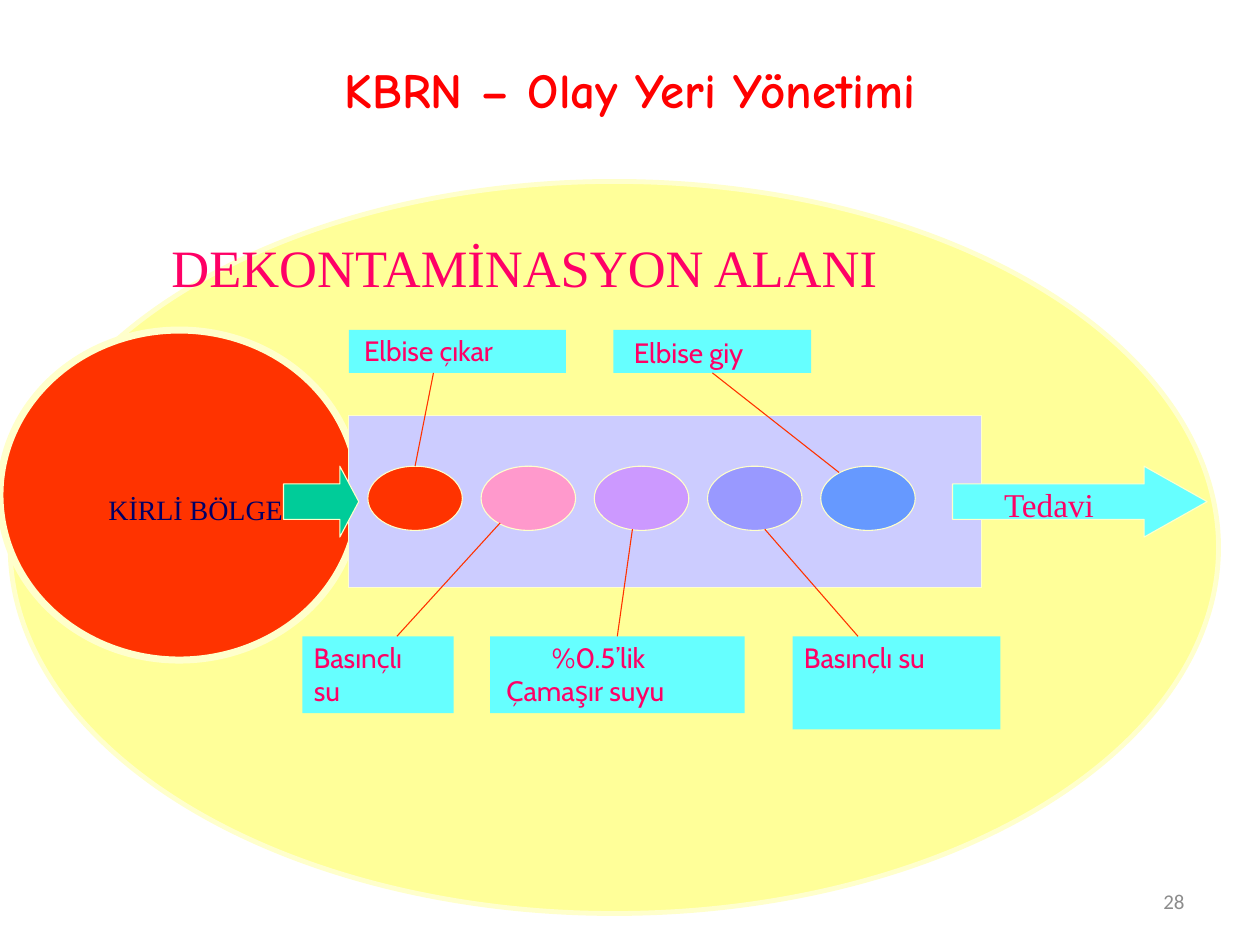
from dataclasses import dataclass

from lxml.etree import SubElement
from pptx import Presentation
from pptx.dml.color import RGBColor
from pptx.enum.shapes import MSO_CONNECTOR, MSO_SHAPE
from pptx.enum.text import MSO_ANCHOR, MSO_AUTO_SIZE, PP_ALIGN
from pptx.oxml.ns import qn
from pptx.util import Pt


@dataclass(frozen=True)
class Theme:
    """Colours, fonts and type sizes of the slide."""
    red: str = "FF0000"
    pink: str = "FF0066"
    navy: str = "000066"
    grey: str = "8C8C8C"
    area: str = "FFFF99"
    outline: str = "FFFFCC"
    hot: str = "FF3300"
    corridor: str = "CCCCFF"
    cyan: str = "66FFFF"
    green: str = "00CC99"
    stations: tuple = ("FF3300", "FF99CC", "CC99FF", "9999FF", "6699FF")
    title_font: str = "Comic Neue"
    serif: str = "Times New Roman"
    label_font: str = "Cabin"
    number_font: str = "Calibri"
    title: float = 28
    heading: float = 30
    treatment: float = 19
    label: float = 16
    number: float = 12
    thin: float = 0.63


T = Theme()


def add_run(tf, text, font, size, color, bold=False):
    """Add one formatted run to the first paragraph and return the paragraph."""
    p = tf.paragraphs[0]
    r = p.add_run()
    r.text = text
    r.font.name = font
    r.font.size = Pt(size)
    r.font.bold = bold
    r.font.color.rgb = RGBColor.from_string(color)
    return p


def add_block(s, kind, box, fill, line_width=0):
    """Add a filled preset shape, outlined when a line width is given."""
    sp = s.shapes.add_shape(kind, *map(Pt, box))
    sp.shadow.inherit = False
    sp.fill.solid()
    sp.fill.fore_color.rgb = RGBColor.from_string(fill)
    if line_width:
        sp.line.color.rgb = RGBColor.from_string(T.outline)
        sp.line.width = Pt(line_width)
    else:
        sp.line.fill.background()
    return sp


def add_arrow(s, box, fill, head):
    """Add a right arrow whose head has the given length."""
    sp = add_block(s, MSO_SHAPE.RIGHT_ARROW, box, fill, T.thin)
    sp.adjustments[0] = 0.5
    sp.adjustments[1] = head / box[3]


def add_caption(s, box, text, font, size, color):
    """Add an unwrapped text box without margins."""
    tf = s.shapes.add_textbox(*map(Pt, box)).text_frame
    tf.margin_left = tf.margin_top = tf.margin_right = tf.margin_bottom = 0
    tf.word_wrap = False
    tf.auto_size = MSO_AUTO_SIZE.SHAPE_TO_FIT_TEXT
    add_run(tf, text, font, size, color)


def add_frame(s, box, align, *run):
    """Add a wrapped, vertically centred text box."""
    tf = s.shapes.add_textbox(*map(Pt, box)).text_frame
    tf.word_wrap = True
    tf.vertical_anchor = MSO_ANCHOR.MIDDLE
    add_run(tf, *run).alignment = align


def add_label(s, box, *lines):
    """Add a cyan label with its text lines and return the rectangle."""
    sp = add_block(s, MSO_SHAPE.RECTANGLE, box, T.cyan)
    for left, top, width, text in lines:
        add_caption(s, (left, top, width, 24.5), text, T.label_font, T.label, T.pink)
    return sp


def add_leader(s, start, end, label=None, site=0, station=None):
    """Add a thin leader, joined to a label side or a station top if given."""
    cx = s.shapes.add_connector(MSO_CONNECTOR.STRAIGHT, *map(Pt, start + end))
    cx.line.color.rgb = RGBColor.from_string(T.hot)
    cx.line.width = Pt(T.thin)
    SubElement(cx._element.spPr, qn("a:effectLst"))
    if label is not None:
        cx.begin_connect(label, site)
    if station is not None:
        cx.end_connect(station, 0)


def add_stations(s):
    """Add the row of evenly spaced stations and return them."""
    return [add_block(s, MSO_SHAPE.OVAL, (210.2 + 64.7 * i, 266.4, 54, 36.7), color, T.thin)
            for i, color in enumerate(T.stations)]


def main():
    """Build the slide and save it."""
    prs = Presentation()
    prs.slide_width, prs.slide_height = Pt(720), Pt(540)
    s = prs.slides.add_slide(prs.slide_layouts[6])

    add_frame(s, (516, 500.5, 168, 28.8), PP_ALIGN.RIGHT,
              "28", T.number_font, T.number, T.grey)
    add_block(s, MSO_SHAPE.OVAL, (5.8, 103.7, 690.5, 418.3), T.area, 2.75)
    add_caption(s, (98, 134.6, 556, 40.3), "DEKONTAMİNASYON ALANI",
                T.serif, T.heading, T.pink)
    add_block(s, MSO_SHAPE.OVAL, (0, 188.6, 205, 188.6), T.hot, 4)
    add_caption(s, (62, 281.5, 100, 19.4), "KİRLİ BÖLGE", T.serif, T.label, T.navy)
    add_block(s, MSO_SHAPE.RECTANGLE, (199.4, 237.6, 361.4, 98), T.corridor, T.thin)
    stations = add_stations(s)

    bleach = add_label(s, (280, 363.6, 145.5, 44), (315.4, 365.8, 97, "%0.5’lik"),
                       (289.4, 385, 144, "Çamaşır suyu"))
    add_label(s, (199.4, 188.6, 124, 24.5), (208, 190.8, 121.7, "Elbise çıkar"))
    add_label(s, (172.8, 363.6, 86.4, 44), (179.3, 365.8, 91.4, "Basınçlı"),
              (179.3, 385, 32.4, "su"))
    dress = add_label(s, (350.6, 188.6, 113, 24.5), (362.2, 191.5, 103.7, "Elbise giy"))
    add_label(s, (452.9, 363.6, 118.8, 53.3), (459.4, 365.8, 114.5, "Basınçlı su"))

    add_arrow(s, (162, 266.4, 43, 40.5), T.green, 10.8)
    add_arrow(s, (544.3, 266.4, 145.5, 40.5), T.cyan, 36)
    add_caption(s, (573.8, 276.5, 80, 26), "Tedavi", T.serif, T.treatment, T.pink)

    add_leader(s, (226.8, 363.6), (285.8, 298.8))
    add_leader(s, (355.7, 363.6), (361.4, 302.4), bleach, 0)
    add_leader(s, (437, 302.4), (490.3, 363.6))
    add_leader(s, (404.6, 213.1), (479.5, 270), dress, 2)
    add_leader(s, (247.7, 213.1), (237.2, 266.4), station=stations[0])

    add_frame(s, (18, -12.2, 684, 126), PP_ALIGN.CENTER,
              "KBRN – Olay Yeri Yönetimi", T.title_font, T.title, T.red, True)
    prs.save("out.pptx")


if __name__ == "__main__":
    main()
